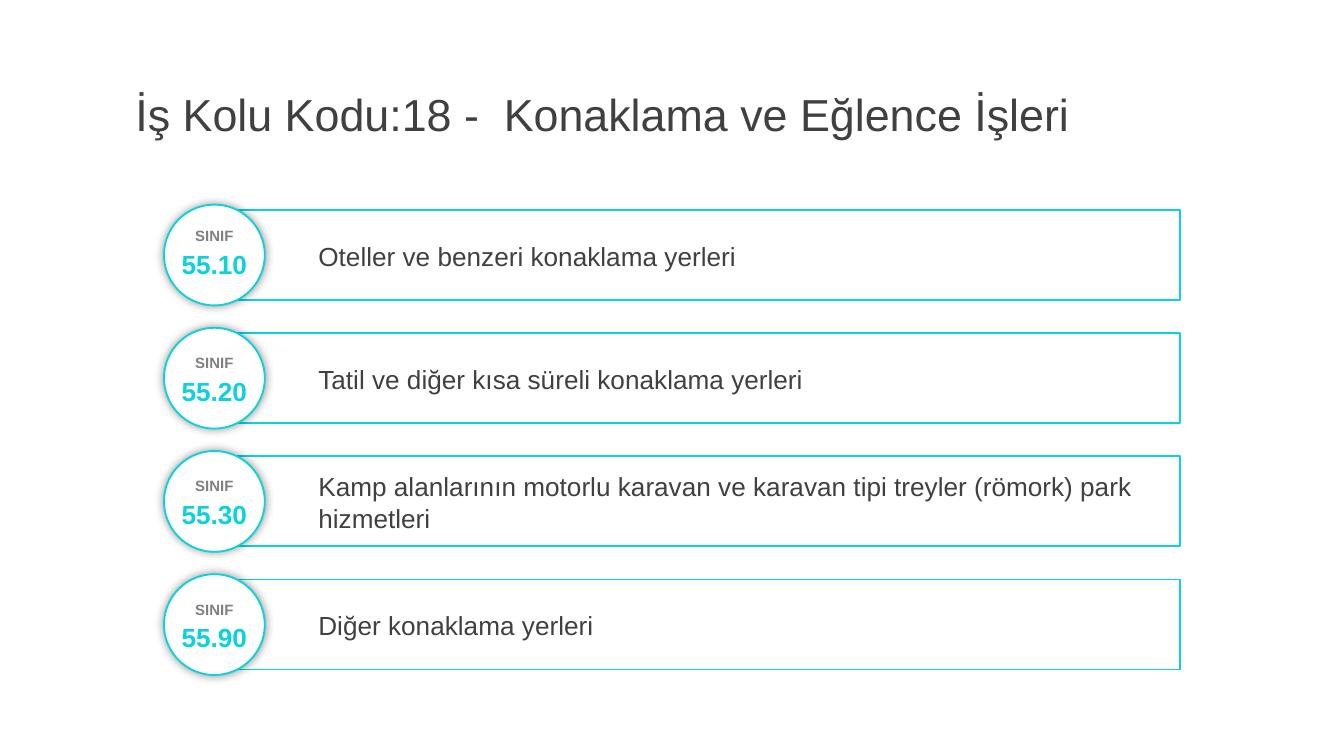
from lxml.etree import SubElement
from pptx import Presentation
from pptx.dml.color import RGBColor
from pptx.enum.shapes import MSO_SHAPE as Shape
from pptx.enum.text import MSO_ANCHOR as Anchor, PP_ALIGN as Align
from pptx.oxml.ns import qn
from pptx.util import Inches, Pt

CYAN, DARK, GRAY, WHITE = "0DD2D9", "404040", "808080", "FFFFFF"
TOP, PITCH = 25 / 16, 11 / 12
# class code, description, text height, lift of the labels in the circle
ROWS = [
    ("55.10", "Oteller ve benzeri konaklama yerleri", 0.34, 0.03),
    ("55.20", "Tatil ve diğer kısa süreli konaklama yerleri", 0.34, 0),
    ("55.30", "Kamp alanlarının motorlu karavan ve karavan tipi treyler "
              "(römork) park hizmetleri", 0.57, 0),
    ("55.90", "Diğer konaklama yerleri", 0.34, 0),
]


def color(code):
    return RGBColor.from_string(code)


def add_text(slide, box, text, size, tint, bold=False, align=Align.LEFT):
    frame = slide.shapes.add_textbox(*map(Inches, box)).text_frame
    frame.word_wrap = True
    frame.vertical_anchor = Anchor.MIDDLE
    para = frame.paragraphs[0]
    para.text = text
    para.alignment = align
    font = para.font
    font.name, font.size, font.bold = "Arial", Pt(size), bold
    font.color.rgb = color(tint)


def add_shape(slide, kind, box, fill=None):
    shape = slide.shapes.add_shape(kind, *map(Inches, box))
    shape.shadow.inherit = False
    if fill:
        shape.fill.solid()
        shape.fill.fore_color.rgb = color(fill)
    else:
        shape.fill.background()
    shape.line.color.rgb = color(CYAN)
    shape.line.width = Pt(1)
    return shape


def add_glow(shape):
    """Give the shape a soft, centred black shadow."""
    effects = shape.element.spPr.find(qn("a:effectLst"))
    shadow = SubElement(effects, qn("a:outerShdw"), blurRad=str(Pt(5)),
                        dist="0", dir="0", algn="ctr", rotWithShape="0")
    black = SubElement(shadow, qn("a:srgbClr"), val="000000")
    SubElement(black, qn("a:alpha"), val="40000")


def add_row(slide, top, code, text, height, lift):
    add_shape(slide, Shape.RECTANGLE, (1.59, top, 7.19, 0.67))
    add_text(slide, (2.27, top + 0.34 - height / 2, 6.28, height),
             text, 14, DARK)
    add_glow(add_shape(slide, Shape.OVAL, (1.22, top - 0.04, 0.75, 0.75),
                       WHITE))
    label = top - lift
    add_text(slide, (1.14, label + 0.26, 0.91, 0.34),
             code, 14, CYAN, True, Align.CENTER)
    add_text(slide, (1.14, label + 0.1, 0.91, 0.24),
             "SINIF", 8, GRAY, True, Align.CENTER)


def main():
    deck = Presentation()
    deck.slide_width, deck.slide_height = Inches(10), Inches(10 * 9 / 16)
    slide = deck.slides.add_slide(deck.slide_layouts[6])
    add_text(slide, (0.91, 0.53, 9.17, 0.63),
             "İş Kolu Kodu:18 -  Konaklama ve Eğlence İşleri", 24, DARK)
    for i, row in enumerate(ROWS):
        add_row(slide, TOP + i * PITCH, *row)
    deck.save("out.pptx")


if __name__ == "__main__":
    main()
